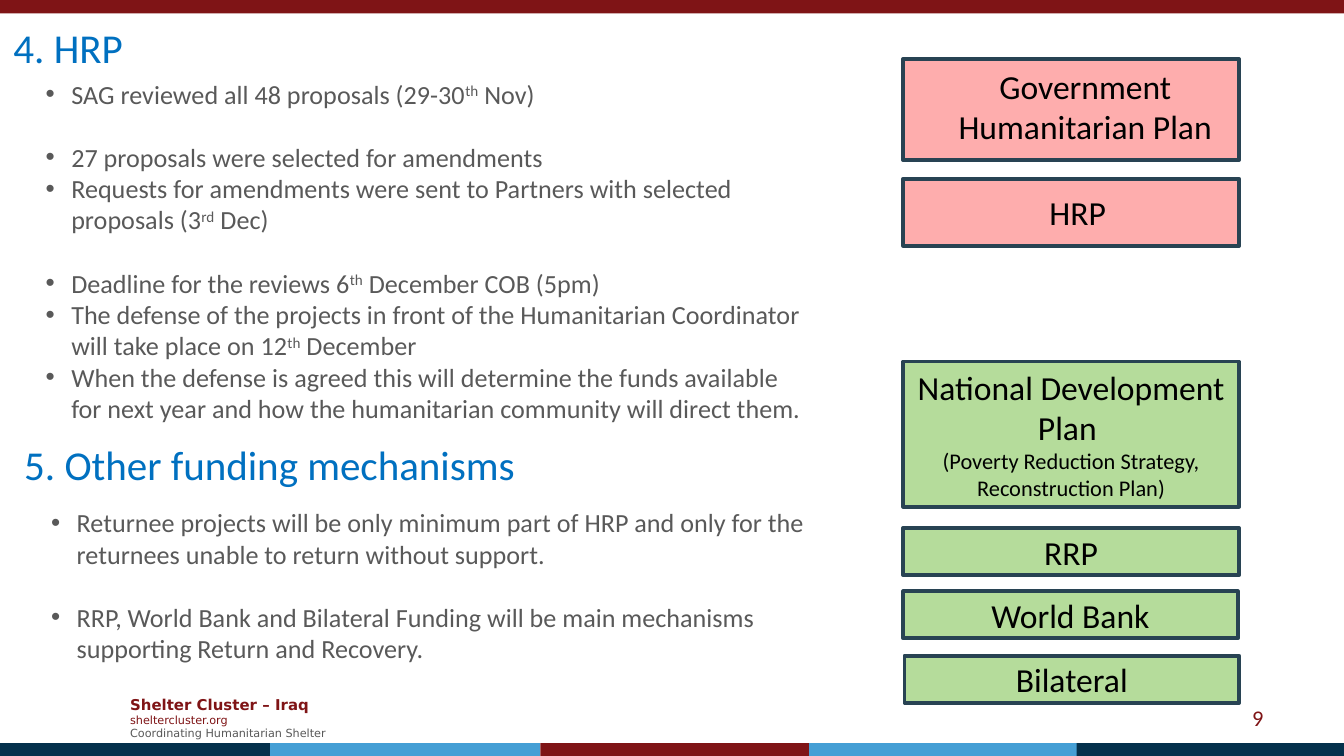
from lxml import etree
from pptx import Presentation
from pptx import util as u
from pptx.dml.color import RGBColor
from pptx.enum import shapes, text
from pptx.oxml.ns import qn

COLORS = {
    "red": "7F1416", "navy": "04314C", "sky": "459FD5", "blue": "0070C0",
    "pink": "FEADAD", "green": "B5DC9B", "edge": "284353",
    "gray": "595959", "black": "000000",
}
LEFT, CENTER, RIGHT = text.PP_ALIGN.LEFT, text.PP_ALIGN.CENTER, text.PP_ALIGN.RIGHT
TOP, MIDDLE = text.MSO_ANCHOR.TOP, text.MSO_ANCHOR.MIDDLE
GAP = 17  # points, one line of list text

# Each item: space before in points, text with ^superscript^ marks
REVIEW = [
    (0, "SAG reviewed all 48 proposals (29-30^th^ Nov)"),
    (GAP, "27 proposals were selected for amendments"),
    (0, "Requests for amendments were sent to Partners with selected "
        "proposals (3^rd^ Dec)"),
    (GAP, "Deadline for the reviews 6^th^ December COB (5pm)"),
    (0, "The defense of the projects in front of the Humanitarian Coordinator "
        "will take place on 12^th^ December"),
    (0, "When the defense is agreed this will determine the funds available "
        "for next year and how the humanitarian community will direct them."),
]
FUNDING = [
    (0, "Returnee projects will be only minimum part of HRP and only for the "
        "returnees unable to return without support."),
    (GAP, "RRP, World Bank and Bilateral Funding will be main mechanisms "
          "supporting Return and Recovery."),
]


def rgb(name):
    return RGBColor.from_string(COLORS[name])


def place(shape, box):
    shape.left, shape.top, shape.width, shape.height = map(u.Inches, box)


def style(para, size, color, align=LEFT, face="Calibri", bold=False):
    para.alignment = align
    para.space_before = u.Pt(0)
    font = para.font
    font.name, font.size, font.bold = face, u.Pt(size), bold
    font.color.rgb = rgb(color)


def setup(frame, anchor):
    frame.word_wrap = True
    frame.auto_size = text.MSO_AUTO_SIZE.NONE
    frame.vertical_anchor = anchor


def write(frame, lines, anchor=MIDDLE, **look):
    """Fill a frame with (text, size, color) lines of one look."""
    setup(frame, anchor)
    for i, (words, size, color) in enumerate(lines):
        para = frame.add_paragraph() if i else frame.paragraphs[0]
        para.text = words
        style(para, size, color, **look)


def label(slide, box, lines, **look):
    shape = slide.shapes.add_textbox(*map(u.Inches, box))
    write(shape.text_frame, lines, **look)
    return shape


def block(slide, box, fill, edge=None):
    shape = slide.shapes.add_shape(
        shapes.MSO_SHAPE.RECTANGLE, *map(u.Inches, box))
    shape.shadow.inherit = False
    shape.fill.solid()
    shape.fill.fore_color.rgb = rgb(fill)
    if edge:
        shape.line.color.rgb = rgb(edge)
        shape.line.width = u.Pt(2)
    else:
        shape.line.fill.background()
    return shape


def heading(holder, box, words):
    place(holder, box)
    write(holder.text_frame, [(words, 22, "blue")])


def bullet(para):
    props = para._p.get_or_add_pPr()
    props.set("marL", str(u.Inches(0.19)))
    props.set("indent", str(u.Inches(-0.19)))
    etree.SubElement(props, qn("a:buFont")).set("typeface", "Arial")
    etree.SubElement(props, qn("a:buChar")).set("char", "•")


def listing(holder, box, items):
    place(holder, box)
    frame = holder.text_frame
    setup(frame, TOP)
    for i, (space, words) in enumerate(items):
        para = frame.add_paragraph() if i else frame.paragraphs[0]
        bullet(para)
        style(para, 14, "gray")
        para.space_before = u.Pt(space)
        for j, part in enumerate(words.split("^")):
            run = para.add_run()
            run.text = part
            if j % 2:
                run.font._element.set("baseline", "30000")


def frame_bars(slide):
    block(slide, (0, 0, 10, 0.1), "red")
    lefts = (0, 2.01, 4.02, 6.02, 8.01)
    for left, fill in zip(lefts, ("navy", "sky", "red", "sky", "navy")):
        block(slide, (left, 5.53, 2.01, 0.1), fill)


def plans(slide):
    for top, height in ((0.44, 0.75), (1.33, 0.5)):
        block(slide, (6.72, top, 2.5, height), "pink", "edge")
    label(slide, (6.74, 0.44, 2.67, 0.71),
          [("Government Humanitarian Plan", 18, "black")],
          anchor=TOP, align=CENTER)
    label(slide, (7.71, 1.38, 1.25, 0.4), [("HRP", 18, "black")], anchor=TOP)

    nation = block(slide, (6.72, 2.69, 2.5, 1.08), "green", "edge")
    write(nation.text_frame, [
        ("National Development Plan ", 18, "black"),
        ("(Poverty Reduction Strategy, Reconstruction Plan)", 12, "black"),
    ], align=CENTER)
    for left, top, width, name in ((6.72, 3.93, 2.5, "RRP"),
                                   (6.72, 4.4, 2.49, "World Bank"),
                                   (6.73, 4.88, 2.49, "Bilateral")):
        fund = block(slide, (left, top, width, 0.35), "green", "edge")
        write(fund.text_frame, [(name, 18, "black")], align=CENTER)


def main():
    deck = Presentation()
    deck.slide_width = u.Inches(10)
    deck.slide_height = u.Inches(10 * 9 / 16)
    slide = deck.slides.add_slide(deck.slide_layouts.get_by_name("Comparison"))
    holders = {h.placeholder_format.idx: h for h in slide.placeholders}
    spare = holders[3]._element
    spare.getparent().remove(spare)

    frame_bars(slide)
    brand = label(slide, (0.87, 5.12, 1.73, 0.44), [
        ("Shelter Cluster – Iraq", 8, "red"),
        ("sheltercluster.org", 6, "red"),
        ("Coordinating Humanitarian Shelter", 6, "gray"),
    ], face="DejaVu Sans")
    brand.text_frame.paragraphs[0].font.bold = True
    label(slide, (7.17, 5.19, 2.33, 0.3), [("9", 12, "red")], align=RIGHT)

    heading(holders[0], (0, 0.1, 10, 0.5), "4. HRP")
    listing(holders[2], (0.24, 0.53, 5.92, 3.07), REVIEW)
    heading(holders[1], (0.08, 3.2, 10, 0.5), "5. Other funding mechanisms")
    listing(holders[4], (0.28, 3.72, 6.15, 1.46), FUNDING)
    plans(slide)
    deck.save("out.pptx")


if __name__ == "__main__":
    main()
